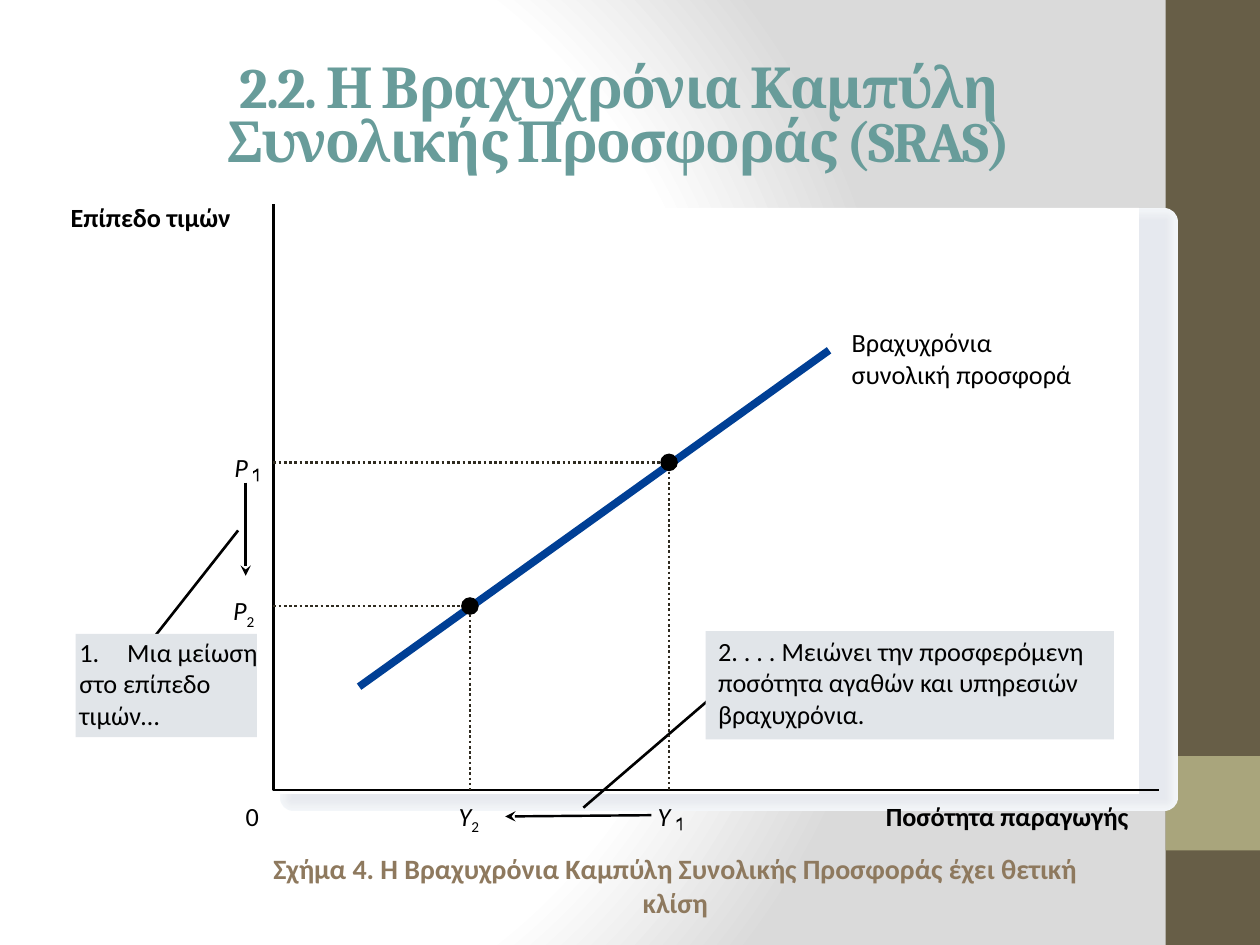
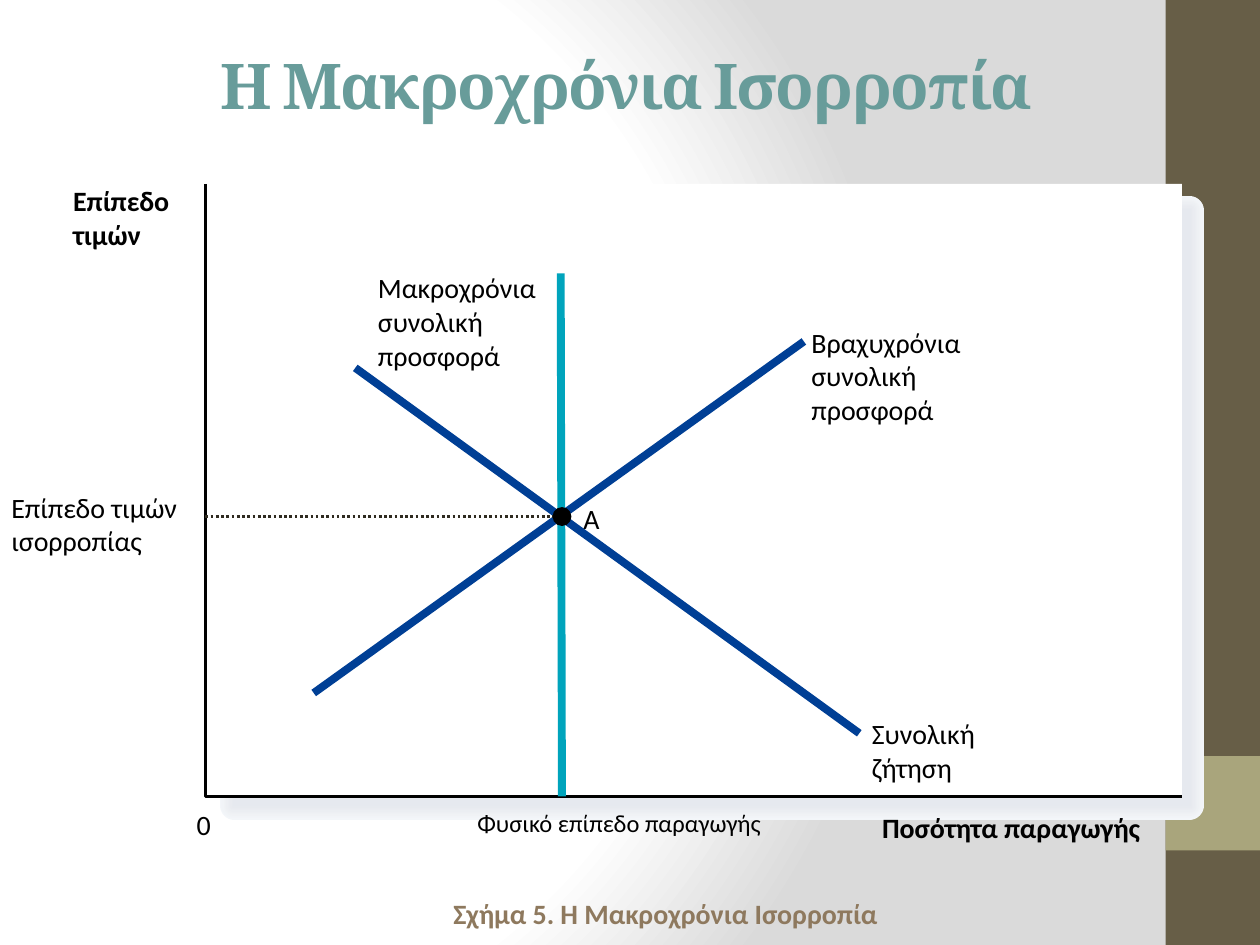
from lxml.etree import SubElement
from pptx import Presentation
from pptx.dml.color import RGBColor
from pptx.enum.dml import MSO_LINE
from pptx.enum.shapes import MSO_CONNECTOR, MSO_SHAPE
from pptx.enum.text import MSO_ANCHOR, PP_ALIGN
from pptx.oxml import parse_xml
from pptx.oxml.ns import nsdecls, qn
from pptx.util import Inches, Pt

HUES = {
    "band": "675E47", "tab": "A9A57C", "title": "689C9A", "note": "8E795E",
    "ink": "000000", "dots": "2F2B20", "curve": "003F95", "long": "00A4BC",
    "box": "E1E5E9", "paper": "FFFFFF", "fade": "DADADA",
}
# Soft halo behind the plot, widest outline first
HALO = ["F3F6F9", "F2F4F8", "F1F4F7", "F0F2F5", "EEF1F4", "EDEFF3",
        "EBEEF2", "EAECF1", "E9EBF0", "E7EAEF", "E6E9EF"]
SANS, SERIF = "Calibri", "Cambria"
DIGIT = [(0.04, 0), (0.03, 0), (0.02, 0.01), (0, 0.02), (0, 0.04),
         (0.01, 0.03), (0.03, 0.02), (0.03, 0.1), (0.04, 0.1)]

# Lines: points, then format. Texts: box, words, then format.
SLIDES = [
    {
        "title": ((0.75, 0.39, 8.33, 1.11), 32.4,
                  "2.2. Η Βραχυχρόνια Καμπύλη\vΣυνολικής Προσφοράς (SRAS)"),
        "halo": ((2.33, 1.76, 6.91, 4.57), 15.88),
        "paper": (2.01, 1.65, 7.03, 4.65),
        "axes": (2.17, 1.62, 9.2, 6.27),
        "size": 15,
        "lines": [
            ([(1.95, 3.83), (1.95, 4.57)], {"wide": 1.38, "arrow": True}),
            ([(5.17, 6.47), (4.01, 6.48)], {"wide": 1.38, "arrow": True}),
            ([(2.85, 5.45), (6.58, 2.78)], {"hue": "curve", "wide": 4.38}),
            ([(1.89, 4.21), (1.15, 5.15)], {}),
            ([(5.7, 5.49), (4.63, 6.41)], {}),
        ],
        "boxes": [(0.6, 5.03, 1.44, 0.82), (5.6, 5.01, 3.24, 0.86)],
        "dots": [(5.31, 3.67), (3.73, 4.81)],
        "drop": True,
        "dot": 0.14,
        "digits": [(5.37, 6.49), (2.01, 3.72)],
        "texts": [
            ((7.03, 6.35, 1.95, 0.25), "Ποσότητα παραγωγής", {"bold": True}),
            ((0.56, 1.6, 1.28, 0.25), "Επίπεδο τιμών", {"bold": True}),
            ((1.95, 6.35, 0.11, 0.25), "0", {}),
            ((6.76, 2.59, 1.76, 0.51), "Βραχυχρόνια\nσυνολική προσφορά", {}),
            ((0.63, 5.05, 1.45, 0.76), "Μια μείωση\nστο επίπεδο\nτιμών…",
             {"count": True}),
            ((5.7, 5.04, 2.93, 0.76),
             "2. . . . Μειώνει την προσφερόμενη\n"
             "ποσότητα αγαθών και υπηρεσιών\nβραχυχρόνια.", {}),
            ((5.22, 6.35, 0.1, 0.25), "Y", {"slant": True}),
            ((1.86, 3.58, 0.11, 0.25), "P", {"slant": True}),
            ((3.64, 6.35, 0.17, 0.25), "Y", {"slant": True, "sub": "2"}),
            ((1.85, 4.72, 0.18, 0.25), "P", {"slant": True, "sub": "2"}),
        ],
        "note": ((2.06, 6.71, 6.6, 0.64), PP_ALIGN.CENTER,
                 "Σχήμα 4. Η Βραχυχρόνια Καμπύλη Συνολικής Προσφοράς "
                 "έχει θετική κλίση"),
    },
    {
        "title": ((0.82, 0.31, 8.3, 0.83), 36, "Η Μακροχρόνια Ισορροπία"),
        "halo": ((1.86, 1.67, 7.58, 4.72), 16.63),
        "paper": (1.63, 1.46, 7.75, 4.86),
        "axes": (1.63, 1.46, 9.38, 6.32),
        "size": 16,
        "lines": [
            ([(2.49, 5.5), (6.38, 2.71)], {"hue": "curve", "wide": 4.5}),
            ([(4.45, 2.17), (4.46, 6.32)], {"hue": "long", "wide": 4.5}),
            ([(6.82, 5.82), (2.82, 2.92)], {"hue": "curve", "wide": 4.5}),
        ],
        "boxes": [],
        "dots": [(4.46, 4.1)],
        "drop": False,
        "dot": 0.15,
        "digits": [],
        "texts": [
            ((3.5, 6.41, 2.83, 0.24), "Φυσικό επίπεδο παραγωγής",
             {"size": 14, "align": PP_ALIGN.CENTER, "wrap": True}),
            ((7, 6.43, 2.08, 0.27), "Ποσότητα παραγωγής", {"bold": True}),
            ((0.58, 1.46, 1.04, 0.54), "Επίπεδο\nτιμών", {"bold": True}),
            ((1.56, 6.41, 0.11, 0.27), "0", {}),
            ((6.44, 2.58, 1.2, 0.81), "Βραχυχρόνια\nσυνολική\nπροσφορά", {}),
            ((3, 2.15, 1.47, 0.81), "Μακροχρόνια\nσυνολική\nπροσφορά",
             {"wrap": True}),
            ((6.92, 5.69, 0.83, 0.54), "Συνολική\nζήτηση", {}),
            ((4.63, 3.98, 0.13, 0.27), "A", {}),
            ((0.09, 3.89, 1.33, 0.54), "Επίπεδο τιμών\nισορροπίας", {}),
        ],
        "note": ((3.5, 7.07, 4.42, 0.37), PP_ALIGN.LEFT,
                 "Σχήμα 5. Η Μακροχρόνια Ισορροπία"),
    },
]


def tint(hue):
    return RGBColor.from_string(HUES.get(hue, hue))


def block(slide, area, hue, kind=MSO_SHAPE.RECTANGLE, edge=0):
    shape = slide.shapes.add_shape(kind, *map(Inches, area))
    shape.shadow.inherit = False
    shape.fill.solid()
    shape.fill.fore_color.rgb = tint(hue)
    if edge:
        shape.line.color.rgb = tint(hue)
        shape.line.width = Pt(edge)
    else:
        shape.line.fill.background()


def trace(slide, points, close=False):
    """Add a freeform through points given in inches."""
    first, *rest = [(Inches(x), Inches(y)) for x, y in points]
    pen = slide.shapes.build_freeform(*first)
    pen.add_line_segments(rest, close=close)
    shape = pen.convert_to_shape()
    shape.shadow.inherit = False
    return shape


def stroke(slide, points, hue="ink", wide=1.5, arrow=False, dash=False):
    """Draw a connector for two points, an open outline for more."""
    if len(points) == 2:
        ends = [Inches(n) for point in points for n in point]
        shape = slide.shapes.add_connector(MSO_CONNECTOR.STRAIGHT, *ends)
    else:
        shape = trace(slide, points)
        shape.fill.background()
    shape.line.color.rgb = tint(hue)
    shape.line.width = Pt(wide)
    if dash:
        shape.line.dash_style = MSO_LINE.ROUND_DOT
    props = shape.element.spPr
    if arrow:
        SubElement(props.find(qn("a:ln")), qn("a:tailEnd"), type="stealth")
    if len(points) == 2:
        SubElement(props, qn("a:effectLst"))


def write(slide, area, words, size=15, font=SANS, hue="ink", bold=False,
          slant=False, sub="", align=PP_ALIGN.LEFT, wrap=False, pad=False,
          anchor=MSO_ANCHOR.TOP, lead=None, track=0, count=False):
    frame = slide.shapes.add_textbox(*map(Inches, area)).text_frame
    frame.word_wrap = wrap
    frame.vertical_anchor = anchor
    if not pad:
        frame.margin_left = frame.margin_right = 0
        frame.margin_top = frame.margin_bottom = 0
    for i, line in enumerate(words.split("\n")):
        para = frame.add_paragraph() if i else frame.paragraphs[0]
        para.text = line
        para.alignment = align
        para.line_spacing = lead
        if count and not i:
            props = para._p.get_or_add_pPr()
            props.set("marL", str(Inches(0.38)))
            props.set("indent", str(-Inches(0.38)))
            SubElement(props, qn("a:buAutoNum"), type="arabicPeriod")
        if sub:
            para.add_run().text = sub
        for j, run in enumerate(para.runs):
            face = run.font
            face.name, face.size, face.bold = font, Pt(size), bold
            face.color.rgb = tint(hue)
            low = bool(sub) and j > 0
            face.italic = slant and not low
            props = run._r.get_or_add_rPr()
            if low:
                props.set("baseline", "-25000")
            if track:
                props.set("spc", str(track * 100))


def stage(slide):
    """Add the shared background and side band."""
    stops = "".join(
        f'<a:gs pos="{at}000"><a:srgbClr val="{HUES[hue]}"/></a:gs>'
        for at, hue in [(0, "paper"), (75, "paper"), (100, "fade")])
    slide.element.cSld.insert(0, parse_xml(
        f'<p:bg {nsdecls("p", "a")}><p:bgPr><a:gradFill rotWithShape="1">'
        f'<a:gsLst>{stops}</a:gsLst><a:path path="circle">'
        '<a:fillToRect l="20000" t="50000" r="100000" b="50000"/></a:path>'
        '</a:gradFill><a:effectLst/></p:bgPr></p:bg>'))
    block(slide, (9.25, 0, 0.75, 7.5), "band")
    block(slide, (9.25, 6, 0.75, 0.75), "tab")


def plot(slide, data):
    area, wide = data["halo"]
    step = (wide - 1.5) / (len(HALO) - 1)
    for i, hue in enumerate(HALO):
        block(slide, area, hue, edge=wide - i * step)
    block(slide, data["paper"], "paper")
    left, top, right, base = data["axes"]
    stroke(slide, [(left, top), (left, base), (right, base)])
    for points, form in data["lines"]:
        stroke(slide, points, **form)
    for area in data["boxes"]:
        block(slide, area, "box")
    d = data["dot"]
    for x, y in data["dots"]:
        guide = [(left, y), (x, y)]
        if data["drop"]:
            guide.append((x, base))
        stroke(slide, guide, hue="dots", dash=True)
        block(slide, (x - d / 2, y - d / 2, d, d), "ink", MSO_SHAPE.OVAL)
    for x, y in data["digits"]:
        one = trace(slide, [(x + a, y + b) for a, b in DIGIT], close=True)
        one.fill.solid()
        one.fill.fore_color.rgb = tint("ink")
        one.line.fill.background()


def main():
    deck = Presentation()
    deck.slide_width, deck.slide_height = Inches(10), Inches(7.5)
    for data in SLIDES:
        slide = deck.slides.add_slide(deck.slide_layouts[6])
        stage(slide)
        area, size, words = data["title"]
        write(slide, area, words, size=size, font=SERIF, hue="title",
              bold=True, align=PP_ALIGN.CENTER, wrap=True, pad=True,
              anchor=MSO_ANCHOR.MIDDLE, lead=0.8, track=-1)
        plot(slide, data)
        for area, words, form in data["texts"]:
            write(slide, area, words, **{"size": data["size"], **form})
        area, align, words = data["note"]
        write(slide, area, words, size=16, hue="note", bold=True,
              align=align, wrap=True, pad=True)
    deck.save("out.pptx")


if __name__ == "__main__":
    main()
